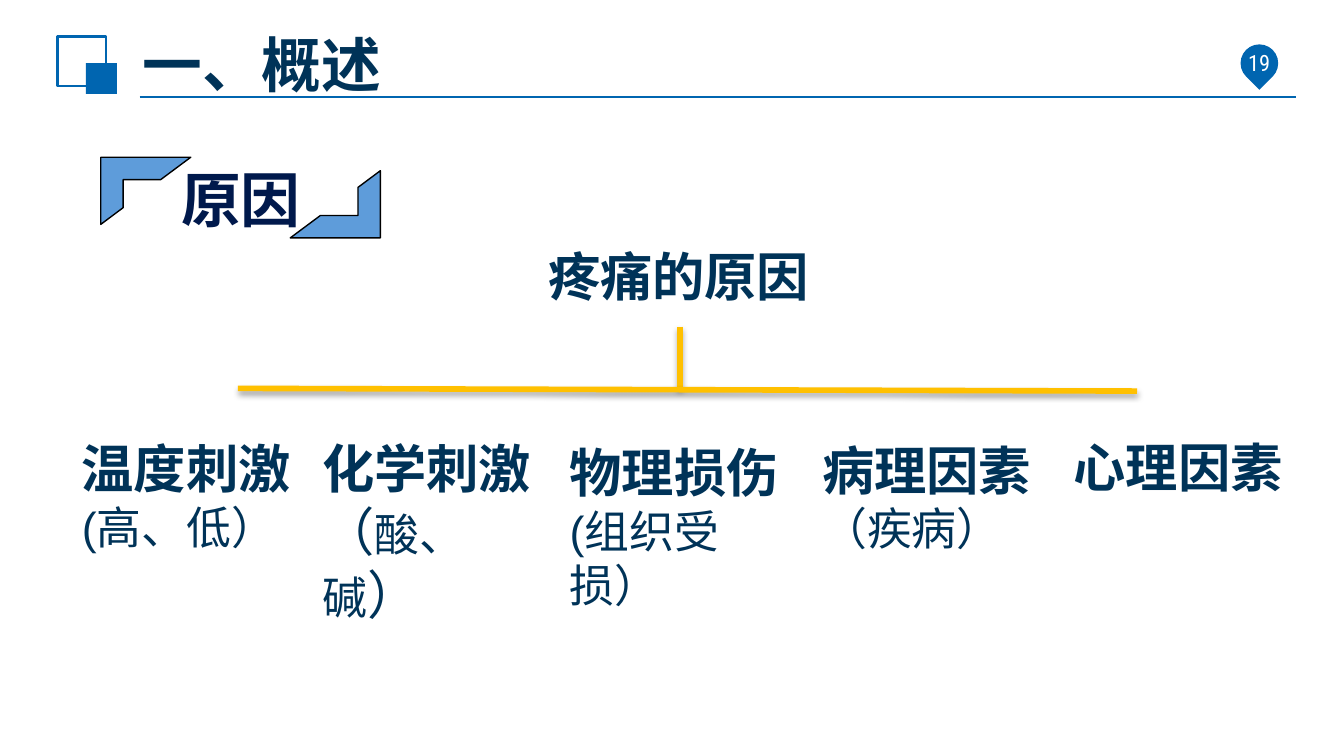
"""Builds the slide that sorts the causes of pain into five groups."""
import pptx
import pptx.dml.color
import pptx.enum.shapes
import pptx.enum.text
import pptx.oxml
import pptx.oxml.ns
import pptx.util

WIDTH = 10
HEIGHT = WIDTH * 9 / 16
BLUE, NAVY, INK, GOLD = "0065B0", "003358", "00194C", "FFC000"
SANS, CJK = "Arial", "Noto Sans CJK SC"
Inches = pptx.util.Inches
Shape = pptx.enum.shapes.MSO_SHAPE
Align = pptx.enum.text.PP_ALIGN
Anchor = pptx.enum.text.MSO_ANCHOR

TITLE, PAGE, SECTION, ROOT = "一、概述", "19", "原因", "疼痛的原因"
CAUSE_WIDTH = 1.89
CAUSES = [
    (0.51, 3.20, 0.98, [[("温度刺激", 28, True)], [("(高、低）", 24, False)]]),
    (2.30, 3.20, 1.04, [[("化学刺激", 28, True), ("（", 28, False),
                         ("酸、碱", 24, False), ("）", 28, False)]]),
    (4.14, 3.23, 0.98, [[("物理损伤", 28, True), ("(组织受损）", 24, False)]]),
    (6.02, 3.21, 0.98, [[("病理因素", 28, True)], [("（疾病）", 24, False)]]),
    (7.89, 3.19, 0.57, [[("心理因素", 28, True)]]),
]
BRANCHES = [((5.06, 2.43), (5.06, 2.89)), ((8.46, 2.91), (1.77, 2.89))]
MARKS = [
    (Shape.RECTANGLE, (0.43, 0.27, 0.36, 0.37), 0, None, BLUE, 1.5),
    (Shape.RECTANGLE, (0.64, 0.47, 0.23, 0.23), 0, BLUE, None, 0),
    (Shape.TEAR, (9.23, 0.33, 0.28, 0.28), 135, BLUE, None, 0),
    (Shape.HALF_FRAME, (0.75, 1.17, 0.67, 0.5), 0, "5E9CDA", "000000", 0.75),
    (Shape.HALF_FRAME, (2.16, 1.27, 0.67, 0.5), 180, "5E9CDA", "000000", 0.75),
]
SHADOW = ('<a:outerShdw blurRad="39370" dist="22860" dir="5400000" rotWithShape="0">'
          '<a:srgbClr val="000000"><a:alpha val="35000"/></a:srgbClr></a:outerShdw>')


def rgb(value):
    """Turn a hex string into a colour."""
    return pptx.dml.color.RGBColor.from_string(value)


def add_mark(slide, kind, box, turn, fill, line, weight):
    """Add a preset shape with an optional fill and outline."""
    mark = slide.shapes.add_shape(kind, *map(Inches, box))
    mark.shadow.inherit = False
    mark.rotation = turn
    if fill:
        mark.fill.solid()
        mark.fill.fore_color.rgb = rgb(fill)
    else:
        mark.fill.background()
    if line:
        mark.line.color.rgb = rgb(line)
        mark.line.width = pptx.util.Pt(weight)
    else:
        mark.line.fill.background()


def add_line(slide, start, end, colour, weight, effect=""):
    """Add a straight line with an optional effect."""
    line = slide.shapes.add_connector(
        pptx.enum.shapes.MSO_CONNECTOR.STRAIGHT, *map(Inches, start + end))
    line.line.color.rgb = rgb(colour)
    line.line.width = pptx.util.Pt(weight)
    line._element.spPr.append(pptx.oxml.parse_xml(
        f'<a:effectLst {pptx.oxml.ns.nsdecls("a")}>{effect}</a:effectLst>'))


def add_text(slide, box, paragraphs, colour=NAVY, font=SANS, align=Align.LEFT,
             anchor=Anchor.TOP, inset=(0.1, 0.05)):
    """Add a wrapped text box from paragraphs of (text, size, bold) runs."""
    frame = slide.shapes.add_textbox(*map(Inches, box)).text_frame
    frame.word_wrap = True
    frame.vertical_anchor = anchor
    frame.margin_left = frame.margin_right = Inches(inset[0])
    frame.margin_top = frame.margin_bottom = Inches(inset[1])
    for index, runs in enumerate(paragraphs):
        paragraph = frame.add_paragraph() if index else frame.paragraphs[0]
        paragraph.alignment = align
        for text, size, bold in runs:
            run = paragraph.add_run()
            run.text = text
            run.font.size = pptx.util.Pt(size)
            run.font.bold = bold
            run.font.color.rgb = rgb(colour)
            run.font.name = font
            run._r.get_or_add_rPr().append(pptx.oxml.parse_xml(
                f'<a:ea {pptx.oxml.ns.nsdecls("a")} typeface="{CJK}"/>'))


def main():
    """Build and save the slide."""
    deck = pptx.Presentation()
    deck.slide_width, deck.slide_height = Inches(WIDTH), Inches(HEIGHT)
    slide = deck.slides.add_slide(deck.slide_layouts[6])
    add_line(slide, (1.04, 0.72), (9.64, 0.72), BLUE, 1.25)
    for mark in MARKS:
        add_mark(slide, *mark)
    add_text(slide, (0.99, 0.29, 6.45, 0.36), [[(TITLE, 32, True)]],
             anchor=Anchor.MIDDLE, inset=(0.07, 0.04))
    add_text(slide, (8.7, 0.3, 1.34, 0.33), [[(PAGE, 12, False)]], "FFFFFF",
             "Roboto Condensed", Align.CENTER, Anchor.MIDDLE, (0.11, 0.06))
    add_text(slide, (1.25, 1.16, 1.25, 0.64), [[(SECTION, 32, True)]], INK, CJK)
    add_text(slide, (3.98, 1.77, 2.36, 0.57), [[(ROOT, 28, True)]])
    for start, end in BRANCHES:
        add_line(slide, start, end, GOLD, 3, SHADOW)
    for left, top, height, paragraphs in CAUSES:
        add_text(slide, (left, top, CAUSE_WIDTH, height), paragraphs)
    deck.save("out.pptx")


if __name__ == "__main__":
    main()
